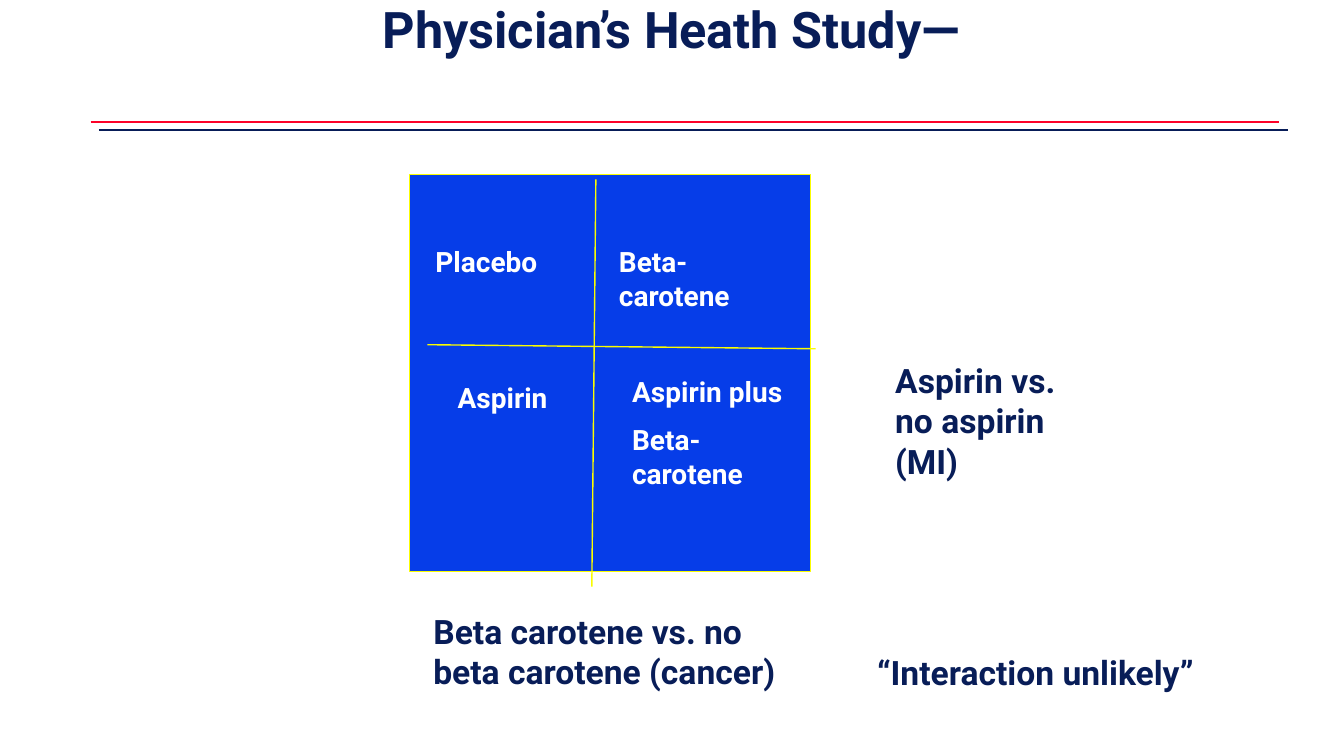
from lxml.etree import SubElement
from pptx import Presentation
from pptx.dml.color import RGBColor
from pptx.enum.shapes import MSO_CONNECTOR as Conn, MSO_SHAPE as Shape
from pptx.enum.text import PP_ALIGN as Align
from pptx.oxml.ns import qn
from pptx.util import Inches, Pt

NAVY, RED, BLUE = "081D58", "FC0128", "063DE8"
GOLD, WHITE = "FAFD00", "FFFFFF"


def color(code):
    """Turn a hex string into a colour."""
    return RGBColor.from_string(code)


def write(slide, text, box, size=24, ink=NAVY, align=Align.LEFT, space=1.0):
    """Place bold text in a box, one paragraph per line."""
    frame = slide.shapes.add_textbox(*map(Inches, box)).text_frame
    frame.word_wrap = True
    for i, line in enumerate(text.split("\n")):
        para = frame.paragraphs[0] if i == 0 else frame.add_paragraph()
        para.alignment = align
        para.line_spacing = space
        para.space_before = Pt(size / 2 if i else 0)
        run = para.add_run()
        run.text = line
        font = run.font
        font.name, font.size, font.bold = "Roboto", Pt(size), True
        font.color.rgb = color(ink)


def rule(slide, start, end, ink):
    """Draw a thin line between two points."""
    line = slide.shapes.add_connector(Conn.STRAIGHT, *map(Inches, start + end))
    line.line.color.rgb = color(ink)
    line.line.width = Pt(1)
    SubElement(line._element.spPr, qn("a:effectLst"))


def header(slide, left, top, width):
    """Draw the title with its double rule."""
    write(slide, "Physician’s Heath Study—", (left, top, width, 1.2),
          size=36, align=Align.CENTER, space=0.9)
    for shift, ink in ((0.08, NAVY), (0, RED)):
        x, y = left + 0.9 + shift, top + 1.21 + shift
        rule(slide, (x, y), (x + 11.79, y), ink)


def grid(slide, left, top, width, height):
    """Draw the square of four treatment groups."""
    box = slide.shapes.add_shape(
        Shape.RECTANGLE, *map(Inches, (left, top, width, height)))
    box.shadow.inherit = False
    box.fill.solid()
    box.fill.fore_color.rgb = color(BLUE)
    box.line.color.rgb = color(GOLD)
    box.line.width = Pt(1)
    rule(slide, (left + 1.85, top + 0.05), (left + 1.81, top + 4.09), GOLD)
    rule(slide, (left + 0.18, top + 1.69), (left + 4.03, top + 1.73), GOLD)
    groups = (
        ("Placebo", 0.16, 0.65, 1.48, 0.43),
        ("Aspirin", 0.38, 2.0, 1.26, 0.43),
        ("Beta-carotene", 1.98, 0.65, 1.61, 0.77),
        ("Aspirin plus\nBeta-carotene", 2.11, 1.94, 1.81, 1.6),
    )
    for text, x, y, w, h in groups:
        write(slide, text, (left + x, top + y, w, h), size=20, ink=WHITE)


def notes(slide, left, top):
    """Write the comparisons beside and below the square."""
    items = (
        ("Aspirin vs. no aspirin (MI)", 4.58, 0, 1.81, 1.72),
        ("Beta carotene vs. no beta carotene (cancer)", 0, 2.49, 3.7, 1.31),
        ("“Interaction unlikely”", 4.4, 2.9, 4.21, 0.5),
    )
    for text, x, y, w, h in items:
        write(slide, text, (left + x, top + y, w, h))


def main():
    """Build the slide and save it."""
    deck = Presentation()
    deck.slide_width, deck.slide_height = Inches(13.33), Inches(7.5)
    slide = deck.slides.add_slide(deck.slide_layouts[6])
    header(slide, 0, 0, 13.32)
    grid(slide, 4.06, 1.73, 3.98, 3.94)
    notes(slide, 4.2, 3.52)
    deck.save("out.pptx")


if __name__ == "__main__":
    main()
